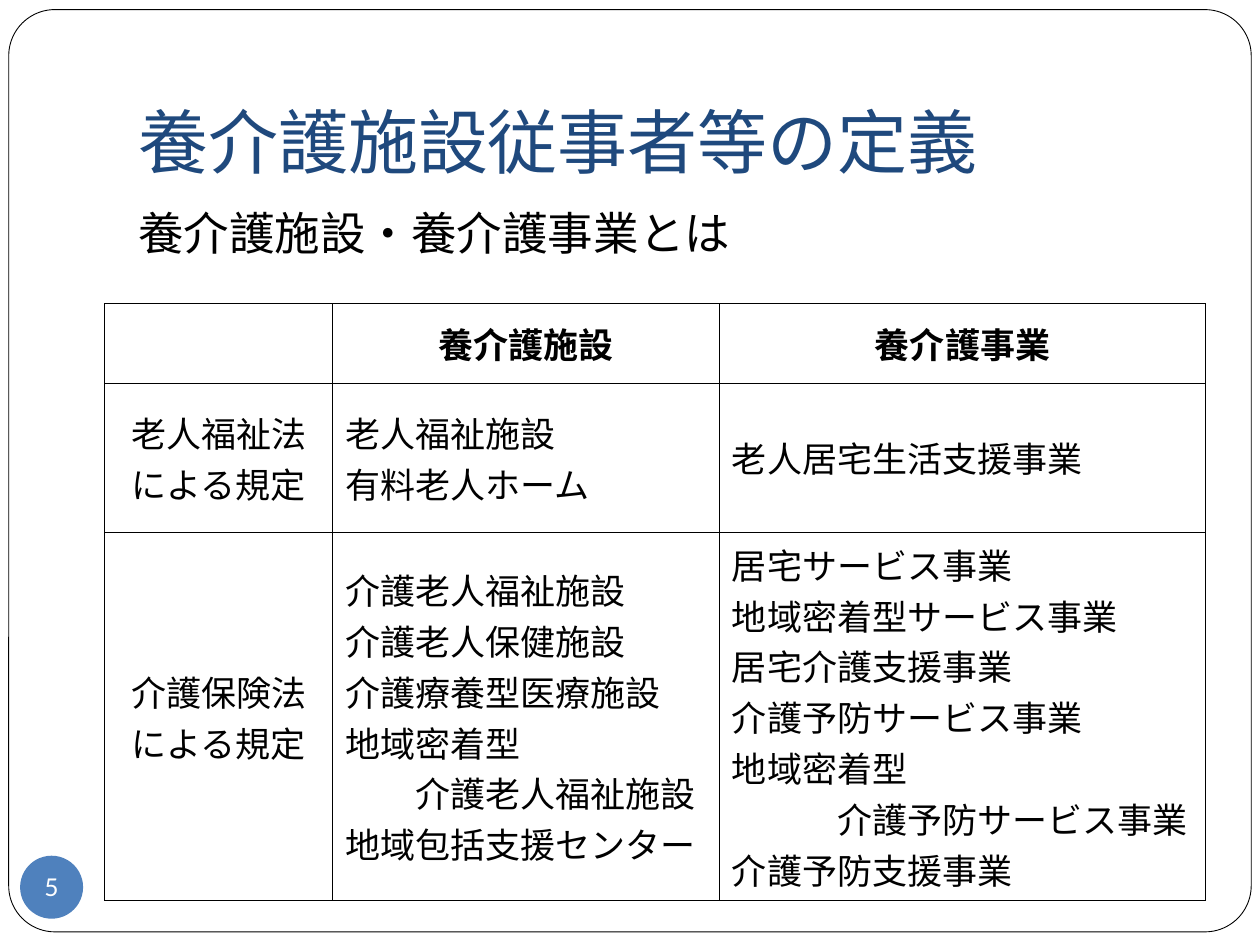
from lxml.etree import SubElement
from pptx import Presentation
from pptx.dml.color import RGBColor
from pptx.enum.shapes import MSO_SHAPE as Shape
from pptx.enum.text import MSO_ANCHOR as Anchor, PP_ALIGN as Align
from pptx.oxml.ns import qn
from pptx.util import Pt

# Content: a cell is a list of (text, indent in characters)
TITLE = "養介護施設従事者等の定義"
SUBTITLE = "養介護施設・養介護事業とは"
PAGE_NUMBER = "5"
ROWS = [
    [[], [("養介護施設", 0)], [("養介護事業", 0)]],
    [
        [("老人福祉法による規定", 0)],
        [("老人福祉施設", 0), ("有料老人ホーム", 0)],
        [("老人居宅生活支援事業", 0)],
    ],
    [
        [("介護保険法による規定", 0)],
        [("介護老人福祉施設", 0), ("介護老人保健施設", 0),
         ("介護療養型医療施設", 0), ("地域密着型", 0),
         ("介護老人福祉施設", 2), ("地域包括支援センター", 0)],
        [("居宅サービス事業", 0), ("地域密着型サービス事業", 0),
         ("居宅介護支援事業", 0), ("介護予防サービス事業", 0),
         ("地域密着型", 0), ("介護予防サービス事業", 3),
         ("介護予防支援事業", 0)],
    ],
]
COLUMN_WIDTHS = [130.3, 221, 278]
ROW_HEIGHTS = [45.4, 85.2, 210.5]
TABLE_LEFT, TABLE_TOP = 59.8, 173.5
CELL_SIZE = 20

BLACK = RGBColor(0x00, 0x00, 0x00)
WHITE = RGBColor(0xFF, 0xFF, 0xFF)
NAVY = RGBColor(0x1F, 0x49, 0x7D)
BLUE = RGBColor(0x4F, 0x81, 0xBD)
HEAD_FONT, BODY_FONT = "Lato", "Times New Roman"


def write(paragraph, text, size, font, color, bold=False, align=Align.LEFT):
    paragraph.alignment = align
    run = paragraph.add_run()
    run.text = text
    look = {"size": Pt(size), "name": font, "bold": bold}
    for key, value in look.items():
        setattr(run.font, key, value)
    run.font.color.rgb = color


def set_frame(frame, anchor, margins, wrap=True):
    look = {"vertical_anchor": anchor, "word_wrap": wrap}
    sides = ("left", "top", "right", "bottom")
    look.update({f"margin_{side}": Pt(m) for side, m in zip(sides, margins)})
    for key, value in look.items():
        setattr(frame, key, value)


def add_plain(shapes, kind, box, fill):
    shape = shapes.add_shape(kind, *map(Pt, box))
    shape.shadow.inherit = False
    shape.fill.solid()
    shape.fill.fore_color.rgb = fill
    return shape


def add_text(shapes, box, anchor, margins, *style):
    frame = shapes.add_textbox(*map(Pt, box)).text_frame
    set_frame(frame, anchor, margins)
    write(frame.paragraphs[0], *style)
    return frame


def add_borders(cell):
    properties = cell._tc.get_or_add_tcPr()
    for index, side in enumerate(("lnL", "lnR", "lnT", "lnB")):
        line = properties.makeelement(qn(f"a:{side}"), w=str(Pt(0.5)))
        fill = SubElement(line, qn("a:solidFill"))
        SubElement(fill, qn("a:srgbClr"), val=str(BLACK))
        properties.insert(index, line)


def fill_cell(cell, lines, bold, align):
    cell.fill.background()
    cell.vertical_anchor = Anchor.MIDDLE
    add_borders(cell)
    frame = cell.text_frame
    for index, (text, indent) in enumerate(lines):
        paragraph = frame.add_paragraph() if index else frame.paragraphs[0]
        write(paragraph, text, CELL_SIZE, BODY_FONT, BLACK, bold, align)
        if indent:
            paragraph._p.get_or_add_pPr().set("marL", str(Pt(indent * CELL_SIZE)))


def main():
    deck = Presentation()
    deck.slide_width, deck.slide_height = Pt(720), Pt(540)
    shapes = deck.slides.add_slide(deck.slide_layouts[6]).shapes

    # Rounded page frame
    page = add_plain(shapes, Shape.ROUNDED_RECTANGLE, (5, 5.5, 710, 527), WHITE)
    page.adjustments[0] = 0.05
    page.line.color.rgb = BLACK
    page.line.width = Pt(0.5)

    # Title and subtitle
    add_text(shapes, (72, 21.6, 612, 90), Anchor.BOTTOM, (7.2, 3.6, 7.2, 7.2),
             TITLE, 40, HEAD_FONT, NAVY)
    subtitle = add_text(shapes, (72, 113.8, 612, 50), Anchor.TOP,
                        (7.2, 3.6, 7.2, 3.6), SUBTITLE, 26, BODY_FONT, BLACK)
    subtitle.paragraphs[0].space_before = Pt(5.8)

    # Page number badge
    badge = add_plain(shapes, Shape.OVAL, (11.5, 489, 36, 36), BLUE)
    badge.line.fill.background()
    set_frame(badge.text_frame, Anchor.MIDDLE, (0, 0, 0, 0), wrap=False)
    write(badge.text_frame.paragraphs[0], PAGE_NUMBER, 14, HEAD_FONT, WHITE,
          align=Align.CENTER)

    # Definition table
    box = (TABLE_LEFT, TABLE_TOP, sum(COLUMN_WIDTHS), sum(ROW_HEIGHTS))
    table = shapes.add_table(len(ROWS), len(COLUMN_WIDTHS), *map(Pt, box)).table
    table.first_row = table.horz_banding = False
    for column, width in zip(table.columns, COLUMN_WIDTHS):
        column.width = Pt(width)
    for r, (cells, height) in enumerate(zip(ROWS, ROW_HEIGHTS)):
        table.rows[r].height = Pt(height)
        for c, lines in enumerate(cells):
            align = Align.CENTER if r == 0 or c == 0 else Align.LEFT
            fill_cell(table.cell(r, c), lines, r == 0, align)

    deck.save("out.pptx")


if __name__ == "__main__":
    main()
